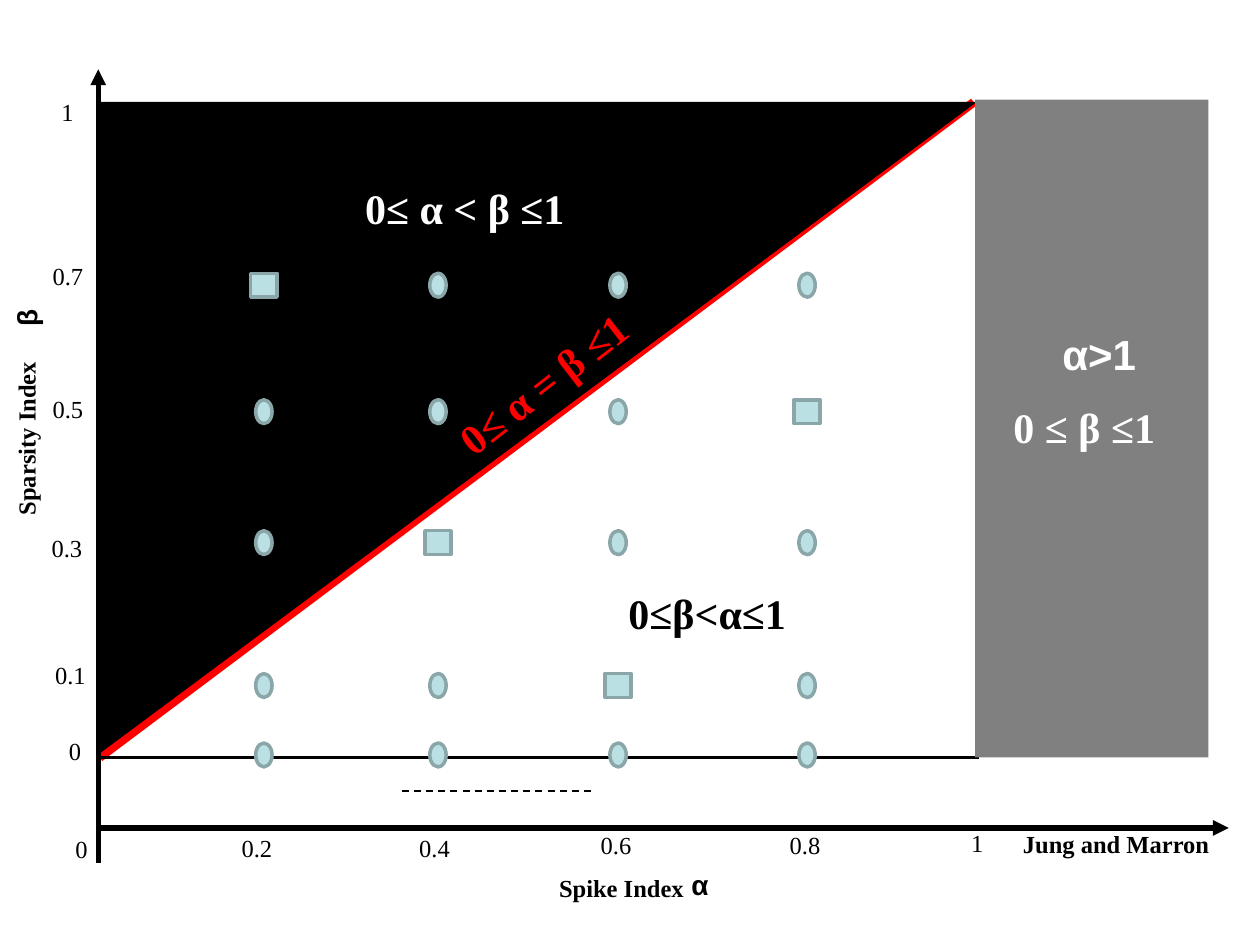
from lxml import etree
from pptx import Presentation
from pptx.dml.color import RGBColor
from pptx.enum.dml import MSO_LINE
from pptx.enum.shapes import MSO_CONNECTOR, MSO_SHAPE
from pptx.enum.text import PP_ALIGN
from pptx.oxml.ns import qn
from pptx.util import Cm, Pt

COLORS = {"black": "000000", "white": "FFFFFF", "red": "FF0000",
          "gray": "808080", "marker": "BBE0E3", "marker_edge": "8AA6A8"}
SERIF, SANS = "Times New Roman", "Arial"

# All lengths are in centimetres.
COLUMNS = {0.2: 5.32, 0.4: 8.83, 0.6: 12.46, 0.8: 16.27}
ROWS = {0.7: 5.75, 0.5: 8.3, 0.3: 10.94, 0.1: 13.82, 0: 15.22}
SQUARES = {(0.2, 0.7), (0.4, 0.3), (0.6, 0.1), (0.8, 0.5)}
OVAL_SIZE, SQUARE_SIZE = (0.33, 0.48), (0.53, 0.48)

# start, end, colour, width in points
DASHED = ((8.1, 15.95), (11.91, 15.95), "black", 1)
DIAGONAL = ((2.01, 15.27), (19.63, 2.06), "red", 5)
BASELINE = ((2.01, 15.27), (19.74, 15.27), "black", 1.5)
AXES = [((1.98, 16.69), (24.77, 16.69), "black", 3),
        ((1.98, 17.4), (1.98, 1.4), "black", 3)]

# text, left, top, width
TICKS = [
    ("1", 0.99, 1.83, 2.11), ("0.7", 0.81, 5.13, 1.32),
    ("0.5", 0.81, 7.82, 1.96), ("0.3", 0.79, 10.62, 2.77),
    ("0.1", 0.86, 13.18, 1.32), ("0", 1.14, 14.71, 2.46),
    ("0", 1.27, 16.69, 2.49), ("0.2", 4.62, 16.66, 3.15),
    ("0.4", 8.2, 16.66, 2.77), ("0.6", 11.86, 16.61, 1.32),
    ("0.8", 15.67, 16.61, 1.83), ("1", 19.33, 16.56, 1.35),
]
# text, box, size, font, colour, rotation
LABELS = [
    ("α", (13.69, 17.37, 2.77, 1.07), 16, SANS, "black", 0),
    ("β", (-0.23, 5.49, 1.63, 1.04), 16, SANS, "black", 270),
    ("Spike Index", (11.02, 17.48, 8.26, 1.07), 14, SERIF, "black", 0),
    ("Sparsity Index", (-3.2, 6.5, 7.44, 0.84), 14, SERIF, "black", 270),
    ("Jung and Marron", (20.37, 16.59, 4.95, 0.94), 14, SERIF, "black", 0),
    ("0≤ α < β ≤1", (7.11, 3.56, 8.31, 2.82), 24, SERIF, "white", 0),
    ("0≤β<α≤1", (12.42, 11.71, 6.63, 2.82), 24, SERIF, "black", 0),
    ("0≤ α = β ≤1", (8.53, 5.84, 8.31, 2.06), 24, SERIF, "red", 322),
]
SPIKE_BOX = (19.53, 6.5, 5.26, 3.94)


def rgb(name):
    return RGBColor.from_string(COLORS[name])


def add_line(s, start, end, color, width, dash=False, arrow=False):
    c = s.shapes.add_connector(MSO_CONNECTOR.STRAIGHT,
                               *(Cm(v) for v in start + end))
    c.line.color.rgb = rgb(color)
    c.line.width = Pt(width)
    if dash:
        c.line.dash_style = MSO_LINE.DASH
    if arrow:
        etree.SubElement(c.line._get_or_add_ln(), qn("a:tailEnd"), type="triangle")
    etree.SubElement(c._element.spPr, qn("a:effectLst"))


def add_shape(s, kind, box, fill, edge=None, width=1):
    sp = s.shapes.add_shape(kind, *(Cm(v) for v in box))
    sp.shadow.inherit = False
    sp.fill.solid()
    sp.fill.fore_color.rgb = rgb(fill)
    if edge:
        sp.line.color.rgb = rgb(edge)
        sp.line.width = Pt(width)
    else:
        sp.line.fill.background()
    return sp


def add_box(s, box, rotation=0):
    sp = s.shapes.add_textbox(*(Cm(v) for v in box))
    sp.rotation = rotation
    sp.text_frame.word_wrap = True
    return sp.text_frame


def add_run(p, text, size, font, color, bold=True):
    r = p.add_run()
    r.text = text
    r.font.size = Pt(size)
    r.font.name = font
    r.font.bold = bold
    r.font.color.rgb = rgb(color)


def add_markers(s):
    for alpha, x in COLUMNS.items():
        for beta, y in ROWS.items():
            square = (alpha, beta) in SQUARES
            kind = MSO_SHAPE.RECTANGLE if square else MSO_SHAPE.OVAL
            w, h = SQUARE_SIZE if square else OVAL_SIZE
            add_shape(s, kind, (x - w / 2, y - h / 2, w, h),
                      "marker", "marker_edge", 2)


def add_spike_text(s):
    tf = add_box(s, SPIKE_BOX)
    p = tf.paragraphs[0]
    p.alignment = PP_ALIGN.CENTER
    add_run(p, "α>1", 24, SANS, "white")
    p = tf.add_paragraph()
    p.space_before = Pt(13)
    p._p.get_or_add_pPr().set("marL", str(Cm(0.65)))
    add_run(p, "0 ≤ β ≤1", 24, SERIF, "white")


def main():
    prs = Presentation()
    prs.slide_width, prs.slide_height = Cm(25.4), Cm(19.05)
    s = prs.slides.add_slide(prs.slide_layouts[6])

    add_line(s, *DASHED, dash=True)
    add_line(s, *DIAGONAL)
    triangle = add_shape(s, MSO_SHAPE.RIGHT_TRIANGLE,
                         (4.27, -0.2, 13.11, 17.65), "black", "black", 0.75)
    triangle.rotation = 90
    add_line(s, *BASELINE)
    add_shape(s, MSO_SHAPE.RECTANGLE, (19.66, 2.01, 4.7, 13.26), "gray")
    for axis in AXES:
        add_line(s, *axis, arrow=True)

    add_markers(s)
    add_spike_text(s)
    for text, left, top, width in TICKS:
        tf = add_box(s, (left, top, width, 1.12))
        add_run(tf.paragraphs[0], text, 14, SERIF, "black", bold=False)
    for text, box, size, font, color, rotation in LABELS:
        tf = add_box(s, box, rotation)
        add_run(tf.paragraphs[0], text, size, font, color)

    prs.save("out.pptx")


if __name__ == "__main__":
    main()
